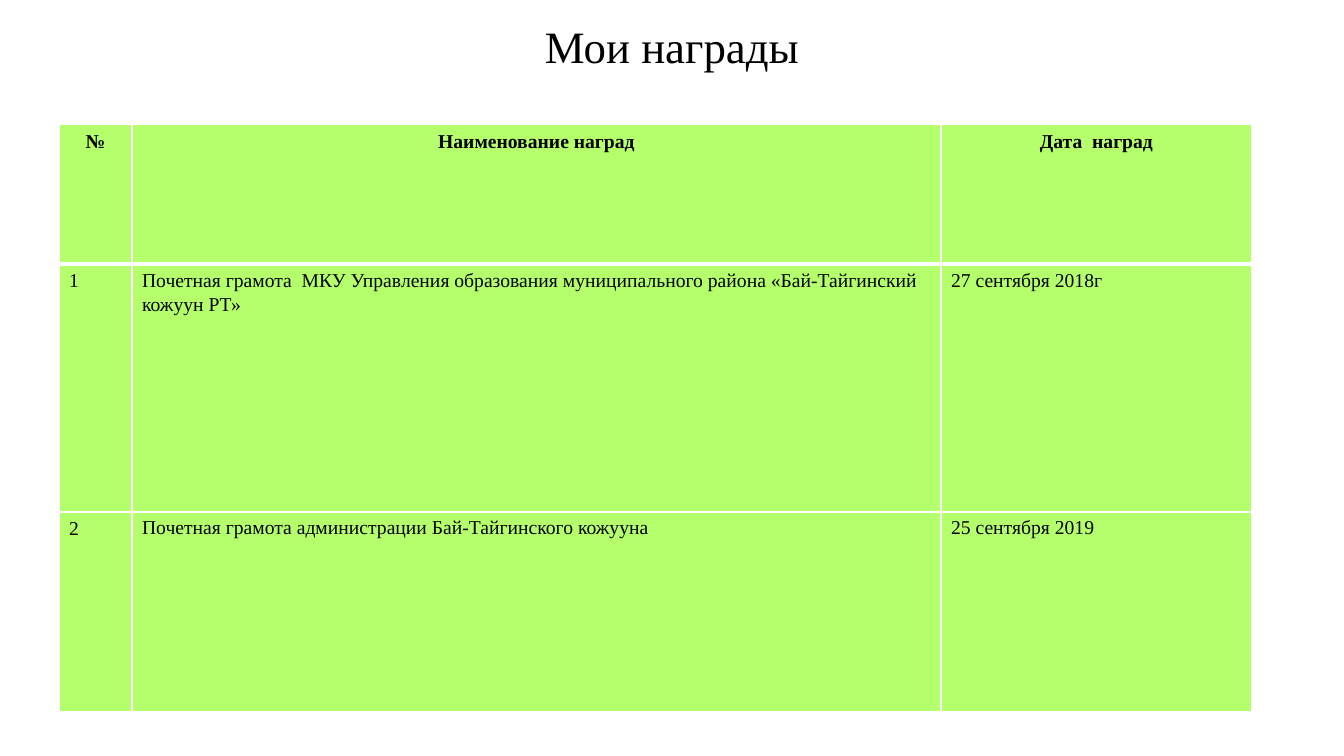
from lxml import etree
from pptx import Presentation
from pptx.dml.color import RGBColor
from pptx.enum.text import MSO_ANCHOR, PP_ALIGN
from pptx.oxml.ns import qn
from pptx.util import Pt

CENTER, LEFT = PP_ALIGN.CENTER, PP_ALIGN.LEFT
MIDDLE = MSO_ANCHOR.MIDDLE
EMU_PER_PX = 914400 / 100.8
COLUMNS = [73, 809, 311]
ROWS = [140, 248, 200]
AWARDS = [
    ["№", "Наименование наград", "Дата  наград"],
    ["1", "Почетная грамота  МКУ Управления образования муниципального района "
     "«Бай-Тайгинский кожуун РТ»", "27 сентября 2018г"],
    ["2", "Почетная грамота администрации Бай-Тайгинского кожууна",
     "25 сентября 2019"],
]


def px(n):
    return round(n * EMU_PER_PX)


def color(value):
    return RGBColor.from_string(value)


class Deck:
    font = "Times New Roman"
    ink, green, white = "000000", "B5FF6C", "FFFFFF"

    def __init__(self, width, height):
        self.prs = Presentation()
        self.prs.slide_width, self.prs.slide_height = px(width), px(height)
        self.s = self.prs.slides.add_slide(self.prs.slide_layouts[5])

    def text(self, tf, content, size, bold=False, **formats):
        p = tf.paragraphs[0]
        for name, value in formats.items():
            setattr(p, name, value)
        r = p.add_run()
        r.text = content
        for name, value in {"name": self.font, "size": Pt(size), "bold": bold}.items():
            setattr(r.font, name, value)
        r.font.color.rgb = color(self.ink)

    def title(self, content, x, y, w, h):
        sp = self.s.shapes.title
        box = {"left": x, "top": y, "width": w, "height": h}
        for name, value in box.items():
            setattr(sp, name, px(value))
        sp.text_frame.vertical_anchor = MIDDLE
        self.text(sp.text_frame, content, 32, alignment=CENTER, line_spacing=1.07)

    def border(self, cell, side, width):
        ln = etree.SubElement(cell._tc.get_or_add_tcPr(), qn(f"a:ln{side}"),
                              w=str(Pt(width)))
        fill = etree.SubElement(ln, qn("a:solidFill"))
        etree.SubElement(fill, qn("a:srgbClr"), val=self.white)

    def table(self, rows, x, y, widths, heights):
        table = self.s.shapes.add_table(
            len(rows), len(widths), px(x), px(y),
            px(sum(widths)), px(sum(heights))).table
        table.horz_banding = False
        for column, width in zip(table.columns, widths):
            column.width = px(width)
        for i, (row, height) in enumerate(zip(rows, heights)):
            table.rows[i].height = px(height)
            for j, content in enumerate(row):
                cell = table.cell(i, j)
                header = i == 0
                edges = {"L": 1, "R": 1, "T": 3 if i == 1 else 1,
                         "B": 3 if header else 1}
                for side, width in edges.items():
                    self.border(cell, side, width)
                cell.fill.solid()
                cell.fill.fore_color.rgb = color(self.green)
                self.text(cell.text_frame, content, 14, header,
                          alignment=CENTER if header else LEFT,
                          line_spacing=1 if i == 2 and j else 1.07)


def main():
    deck = Deck(1344, 756)
    deck.title("Мои награды", 67, 0, 1210, 88)
    deck.table(AWARDS, 59, 124, COLUMNS, ROWS)
    deck.prs.save("out.pptx")


if __name__ == "__main__":
    main()
